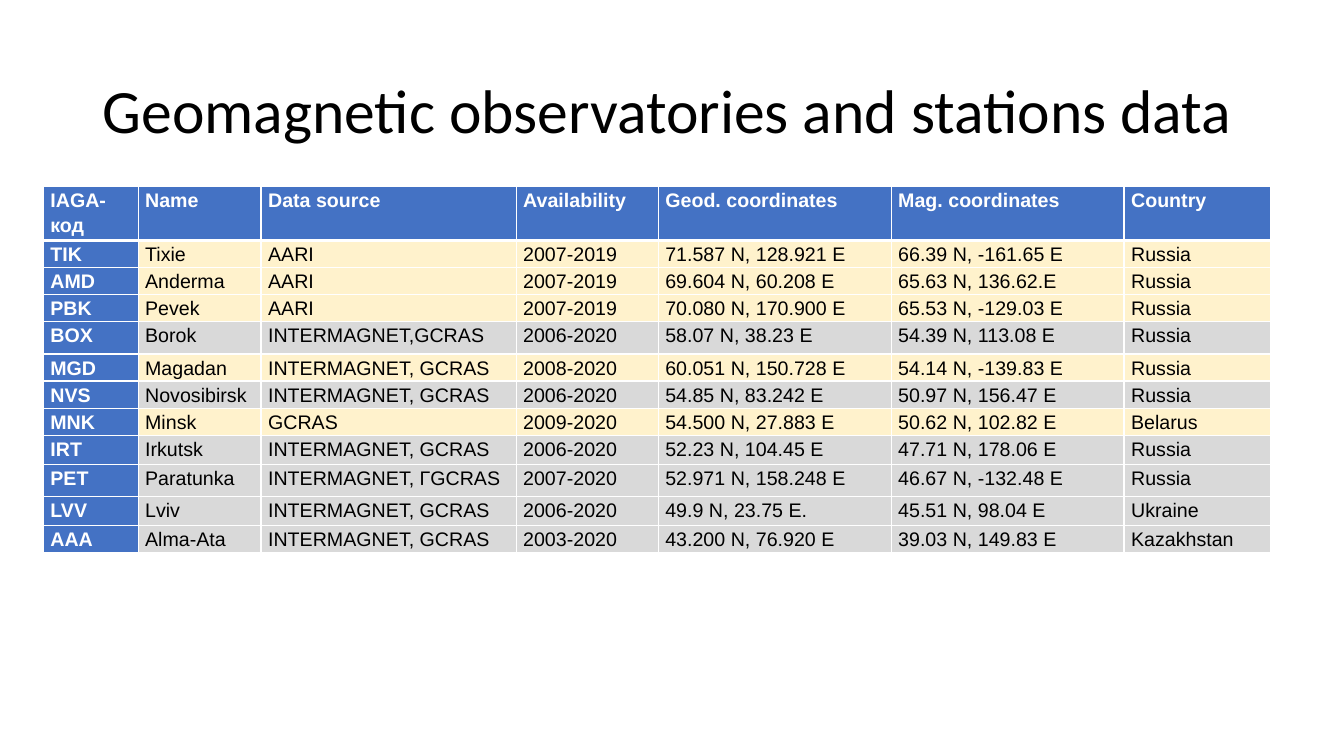
from pptx import Presentation
from pptx.dml.color import RGBColor
from pptx.enum.text import MSO_ANCHOR, PP_ALIGN
from pptx.util import Inches, Pt
from lxml.etree import SubElement
from pptx.oxml.ns import qn


def paint(target, color):
    target.solid()
    target.fore_color.rgb = RGBColor.from_string(color)


def write(frame, text, size, face, color, bold, form):
    para = frame.paragraphs[0]
    for key, value in form.items():
        setattr(para, key, value)
    run = para.add_run()
    run.text = text
    for key, value in {"size": Pt(size), "name": face, "bold": bold}.items():
        setattr(run.font, key, value)
    paint(run.font.fill, color)


BLUE, CREAM, GRAY = "4472C4", "FFF2CC", "D9D9D9"
WHITE, BLACK = "FFFFFF", "000000"

deck = Presentation()
deck.slide_width, deck.slide_height = Inches(13.33), Inches(7.5)
slide = deck.slides.add_slide(deck.slide_layouts[6])

# Title
box = slide.shapes.add_textbox(Inches(0.92), Inches(0.4), Inches(11.5), Inches(1.45))
box.text_frame.word_wrap = True
box.text_frame.vertical_anchor = MSO_ANCHOR.MIDDLE
write(box.text_frame, "Geomagnetic observatories and stations data",
      44, "Calibri", BLACK, False, {"line_spacing": 0.9})

# Table content: row height, row fill, cell texts
wide = [0.94, 1.22, 2.53, 1.41, 2.31, 2.31, 1.45]
both = "INTERMAGNET, GCRAS"
rows = [
    (0.5, BLUE, ["IAGA-код", "Name", "Data source", "Availability",
                 "Geod. coordinates", "Mag. coordinates", "Country"]),
    (0.25, CREAM, ["TIK", "Tixie", "AARI", "2007-2019",
                   "71.587 N, 128.921 E", "66.39 N, -161.65 E", "Russia"]),
    (0.25, CREAM, ["AMD", "Anderma", "AARI", "2007-2019",
                   "69.604 N, 60.208 E", "65.63 N, 136.62.E", "Russia"]),
    (0.25, CREAM, ["PBK", "Pevek", "AARI", "2007-2019",
                   "70.080 N, 170.900 E", "65.53 N, -129.03 E", "Russia"]),
    (0.32, GRAY, ["BOX", "Borok", "INTERMAGNET,GCRAS", "2006-2020",
                  "58.07 N, 38.23 E", "54.39 N, 113.08 E", "Russia"]),
    (0.25, CREAM, ["MGD", "Magadan", both, "2008-2020",
                   "60.051 N, 150.728 E", "54.14 N, -139.83 E", "Russia"]),
    (0.25, GRAY, ["NVS", "Novosibirsk", both, "2006-2020",
                  "54.85 N, 83.242 E", "50.97 N, 156.47 E", "Russia"]),
    (0.25, CREAM, ["MNK", "Minsk", "GCRAS", "2009-2020",
                   "54.500 N, 27.883 E", "50.62 N, 102.82 E", "Belarus"]),
    (0.29, GRAY, ["IRT", "Irkutsk", both, "2006-2020",
                  "52.23 N, 104.45 E", "47.71 N, 178.06 E", "Russia"]),
    (0.32, GRAY, ["PET", "Paratunka", "INTERMAGNET, ГGCRAS", "2007-2020",
                  "52.971 N, 158.248 E", "46.67 N, -132.48 E", "Russia"]),
    (0.29, GRAY, ["LVV", "Lviv", both, "2006-2020",
                  "49.9 N, 23.75 E.", "45.51 N, 98.04 E", "Ukraine"]),
    (0.25, GRAY, ["AAA", "Alma-Ata", both, "2003-2020",
                  "43.200 N, 76.920 E", "39.03 N, 149.83 E", "Kazakhstan"]),
]

# Table grid
high = sum(row[0] for row in rows)
grid = slide.shapes.add_table(len(rows), len(wide), Inches(0.43), Inches(1.85),
                              Inches(sum(wide)), Inches(high)).table
for col, width in zip(grid.columns, wide):
    col.width = Inches(width)

pads = {"margin_left": Inches(0.07), "margin_right": Inches(0.07),
        "margin_top": 0, "margin_bottom": 0}
form = {"alignment": PP_ALIGN.JUSTIFY, "line_spacing": 1.15, "space_after": Pt(10)}

# Table cells
for r, (height, fill, texts) in enumerate(rows):
    grid.rows[r].height = Inches(height)
    for c, text in enumerate(texts):
        cell = grid.cell(r, c)
        for key, value in pads.items():
            setattr(cell, key, value)
        head = r == 0 or c == 0
        write(cell.text_frame, text, 14, "Arial", WHITE if head else BLACK, head, form)

        # White borders, thick below the header
        props = cell._tc.get_or_add_tcPr()
        for side in ("lnL", "lnR", "lnT", "lnB"):
            thick = (r, side) in ((0, "lnB"), (1, "lnT"))
            line = SubElement(props, qn("a:" + side), w=str(Pt(3 if thick else 1)))
            solid = SubElement(line, qn("a:solidFill"))
            SubElement(solid, qn("a:srgbClr"), val=WHITE)
        paint(cell.fill, BLUE if head else fill)

deck.save("out.pptx")
